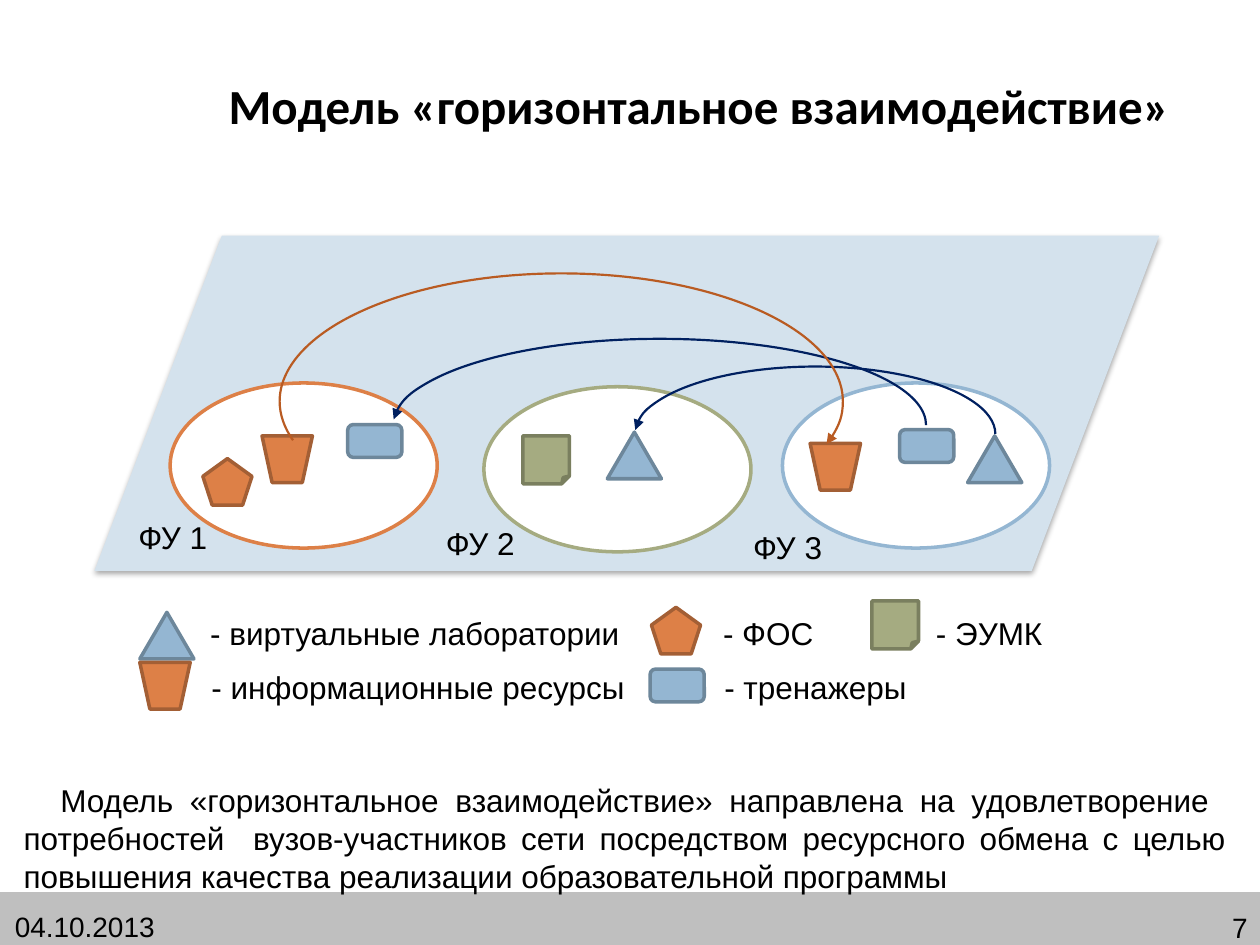
from lxml import etree
from pptx import Presentation
from pptx.dml.color import RGBColor
from pptx.enum.shapes import MSO_SHAPE
from pptx.enum.text import MSO_ANCHOR, PP_ALIGN
from pptx.oxml import parse_xml
from pptx.oxml.ns import nsdecls, qn
from pptx.util import Inches, Pt

LEFT, CENTER, RIGHT, JUSTIFY = PP_ALIGN.LEFT, PP_ALIGN.CENTER, PP_ALIGN.RIGHT, PP_ALIGN.JUSTIFY
TOP, MIDDLE = MSO_ANCHOR.TOP, MSO_ANCHOR.MIDDLE
RECT, OVAL, ARC = MSO_SHAPE.RECTANGLE, MSO_SHAPE.OVAL, MSO_SHAPE.ARC
PLANE = MSO_SHAPE.PARALLELOGRAM

WIDTH, HEIGHT = Inches(10), Inches(7.5)
COL, ROW = WIDTH / 100, HEIGHT / 100

COLORS = {
    "text": "000000", "white": "FFFFFF", "footer": "BFBFBF", "plane": "D4E2ED",
    "blue": "94B6D2", "blue_edge": "6D879B",
    "orange": "DD8047", "orange_edge": "A35F35",
    "green": "A5AB81", "green_edge": "7A7F5F",
    "navy": "002060", "rust": "B95B22",
}
ICONS = {
    "lab": (MSO_SHAPE.ISOSCELES_TRIANGLE, 4.3, 4.93, "blue"),
    "trainer": (MSO_SHAPE.ROUNDED_RECTANGLE, 4.3, 3.47, "blue"),
    "tests": (MSO_SHAPE.REGULAR_PENTAGON, 3.9, 4.93, "orange"),
    "info": (MSO_SHAPE.FLOWCHART_MANUAL_OPERATION, 4, 4.93, "orange"),
    "course": (MSO_SHAPE.FOLDED_CORNER, 3.7, 5.07, "green"),
}
UNITS = [
    ("ФУ 1", "orange", (6, 15.6), (2.5, 29.2)),
    ("ФУ 2", "green", (30.9, 16), (26.9, 29.87)),
    ("ФУ 3", "blue", (54.6, 15.6), (51.3, 30.27)),
]
RESOURCES = [
    ("trainer", 63.9, 20.53), ("lab", 69.3, 21.2), ("tests", 8.6, 23.6),
    ("info", 13.3, 21.2), ("course", 34, 21.2), ("info", 56.8, 22),
    ("lab", 40.7, 20.8), ("trainer", 20.1, 20),
]
EXCHANGES = [
    ((23.7, 10.93, 42.3, 18.27), (108.75, 0), "navy", "headEnd"),
    ((42.9, 13.87, 28.6, 14.27), (108.75, 0), "navy", "headEnd"),
    ((14.7, 4, 44.7, 27.07), (103.04, 5.51), "rust", "tailEnd"),
]
LEGEND = [
    ("lab", 0, 1.2, "- виртуальные лаборатории", 4.6, 0.67, 35.1),
    ("info", 0, 6.5, "- информационные ресурсы", 4.7, 6.4, 35.1),
    ("tests", 40.6, 0.67, "- ФОС", 45.3, 0.67, 9.3),
    ("trainer", 40.5, 7.2, "- тренажеры", 45.4, 6.4, 16.6),
    ("course", 58.1, 0, "- ЭУМК", 62.2, 0.67, 10.6),
]
SUMMARY = ("\tМодель «горизонтальное взаимодействие» направлена на удовлетворение  "
           "потребностей  вузов-участников сети посредством ресурсного обмена с целью "
           "повышения качества реализации образовательной программы")


def rgb(name):
    """Return the palette colour with this name."""
    return RGBColor.from_string(COLORS[name])


def place(box, x, y, w, h):
    """Turn grid columns and rows inside a box into slide lengths."""
    return int((box[0] + x) * COL), int((box[1] + y) * ROW), int(w * COL), int(h * ROW)


def add_shape(s, kind, area, fill=None, line=None, weight=2):
    """Add a flat preset shape."""
    shape = s.shapes.add_shape(kind, *area)
    shape.shadow.inherit = False
    if fill:
        shape.fill.solid()
        shape.fill.fore_color.rgb = rgb(fill)
    else:
        shape.fill.background()
    if line:
        shape.line.color.rgb = rgb(line)
        shape.line.width = Pt(weight)
    else:
        shape.line.fill.background()
    return shape


def add_text(s, text, area, size=18, align=LEFT, wrap=False, font="Arial", bold=False, anchor=TOP):
    """Add a text box holding one paragraph and return the paragraph."""
    tf = s.shapes.add_textbox(*area).text_frame
    tf.word_wrap = wrap
    tf.vertical_anchor = anchor
    p = tf.paragraphs[0]
    p.text = text
    p.alignment = align
    r = p.runs[0]
    r.font.name, r.font.size, r.font.bold = font, Pt(size), bold
    r.font.color.rgb = rgb("text")
    return p


def add_icon(s, name, area_box, x, y):
    """Add the symbol of one kind of resource."""
    kind, w, h, color = ICONS[name]
    add_shape(s, kind, place(area_box, x, y, w, h), color, f"{color}_edge")


def add_shadow(shape):
    """Give a shape a soft shadow below it."""
    effects = shape._element.spPr.find(qn("a:effectLst"))
    effects.append(parse_xml(
        f'<a:outerShdw {nsdecls("a")} blurRad="{Pt(3.1)}" dist="{Pt(1.8)}" dir="5400000" '
        'rotWithShape="0"><a:srgbClr val="000000"><a:alpha val="35000"/></a:srgbClr></a:outerShdw>'))


def draw_footer(s, box):
    """Draw the footer bar with the date and slide number."""
    _, _, w, h = box
    add_shape(s, RECT, place(box, 0, 0, w, h), "footer")
    add_text(s, "04.10.2013", place(box, 0.2, 1.2, 23.3, 5.4), 16)
    add_text(s, "7", place(box, w - 23.3, 1.3, 23.3, 5.4), 16, RIGHT, wrap=True)


def draw_title(s, box):
    """Draw the slide title."""
    add_text(s, "Модель «горизонтальное взаимодействие»", place(box, 0, 0, *box[2:]),
             28, CENTER, True, "Calibri", True, MIDDLE)


def draw_model(s, box):
    """Draw the units on their plane, with resources and exchange arrows."""
    plane = add_shape(s, PLANE, place(box, 0, 0, *box[2:]), "plane")
    plane.adjustments[0] = 0.38
    add_shadow(plane)
    for label, color, oval_at, label_at in UNITS:
        add_shape(s, OVAL, place(box, *oval_at, 21.2, 17.47), "white", color)
        add_text(s, label, place(box, *label_at, 7.6, 5.33))
    for name, x, y in RESOURCES:
        add_icon(s, name, box, x, y)
    for area, angles, color, arrow_end in EXCHANGES:
        arc = add_shape(s, ARC, place(box, *area), line=color, weight=1.25)
        for i, angle in enumerate(angles):
            arc.adjustments[i] = angle
        etree.SubElement(arc.line._get_or_add_ln(), qn(f"a:{arrow_end}"), type="triangle")


def draw_legend(s, box):
    """Draw the symbols with their meanings."""
    for name, x, y, text, text_x, text_y, text_w in LEGEND:
        add_icon(s, name, box, x, y)
        add_text(s, text, place(box, text_x, text_y, text_w, 5.33))


def draw_summary(s, box):
    """Draw the justified closing paragraph."""
    p = add_text(s, SUMMARY, place(box, 0, 0, *box[2:]), align=JUSTIFY, wrap=True)
    tabs = etree.SubElement(p._p.get_or_add_pPr(), qn("a:tabLst"))
    etree.SubElement(tabs, qn("a:tab"), pos=str(Inches(0.29)), algn="l")


def main():
    """Build and save the slide."""
    prs = Presentation()
    prs.slide_width, prs.slide_height = WIDTH, HEIGHT
    s = prs.slides.add_slide(prs.slide_layouts[6])
    draw_footer(s, (0, 94.4, 100, 5.6))
    draw_title(s, (16.7, 5.6, 77.5, 11.07))
    draw_model(s, (7.5, 24.93, 84.5, 35.47))
    draw_legend(s, (11.1, 63.6, 72.8, 11.73))
    draw_summary(s, (0.9, 82, 97.4, 17.47))
    prs.save("out.pptx")


if __name__ == "__main__":
    main()
